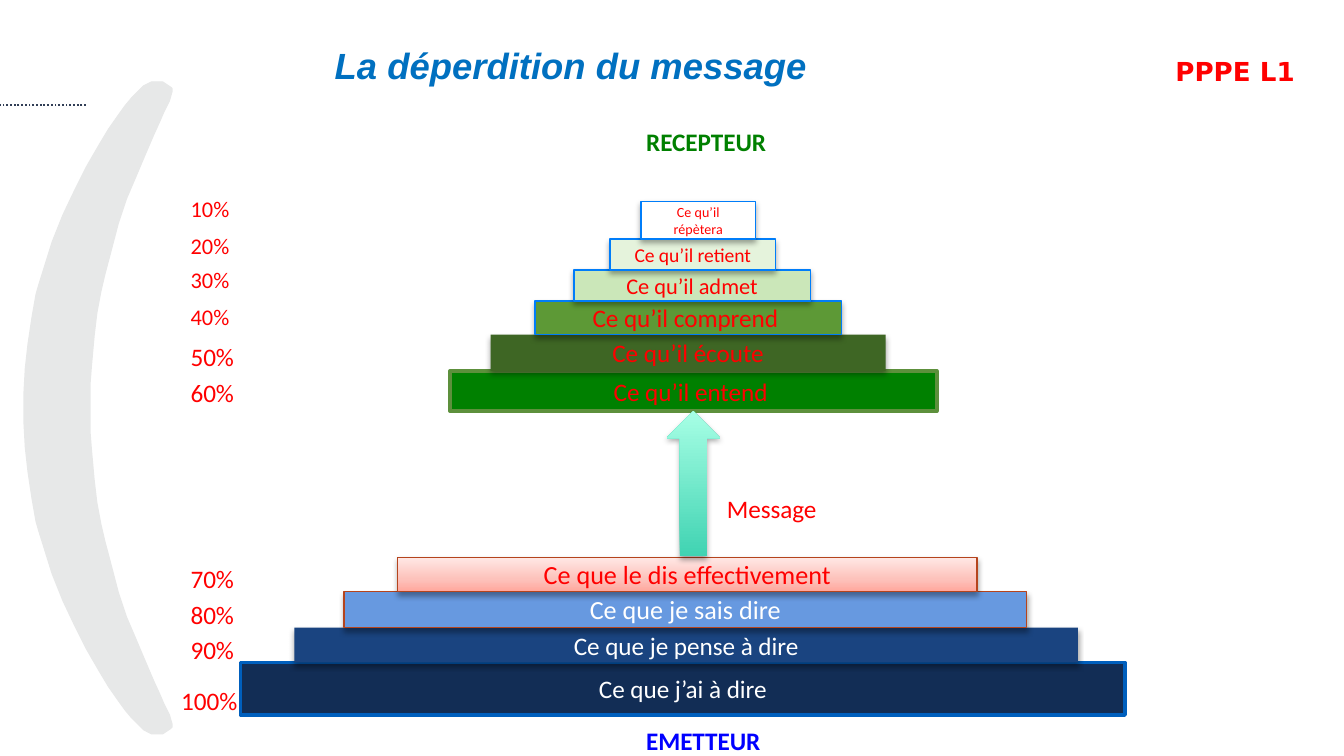
from collections import namedtuple

from lxml.etree import SubElement
from pptx import Presentation
from pptx.dml.color import RGBColor
from pptx.enum.dml import MSO_LINE
from pptx.enum.shapes import MSO_CONNECTOR, MSO_SHAPE
from pptx.enum.text import MSO_ANCHOR, MSO_AUTO_SIZE, PP_ALIGN
from pptx.oxml.ns import qn
from pptx.util import Pt

PX = 9144  # 100 px to the inch

WHITE = RGBColor(0xFF, 0xFF, 0xFF)
RED = RGBColor(0xFF, 0x00, 0x00)
GREEN = RGBColor(0x00, 0x80, 0x00)
BLUE = RGBColor(0x00, 0x00, 0xFF)
TITLE_BLUE = RGBColor(0x00, 0x70, 0xC0)
CRESCENT_GREY = RGBColor(0xE7, 0xE8, 0xE8)
DOTTED_NAVY = RGBColor(0x31, 0x3E, 0x56)
NAVY = RGBColor(0x12, 0x2D, 0x55)
DARK_BLUE = RGBColor(0x1A, 0x44, 0x80)
LIGHT_BLUE = RGBColor(0x67, 0x99, 0xE0)
NAVY_EDGE = RGBColor(0x00, 0x5F, 0xBD)
RUST_EDGE = RGBColor(0xB5, 0x44, 0x1D)
GREEN_EDGE = RGBColor(0x5D, 0x90, 0x3C)
SKY_EDGE = RGBColor(0x00, 0x7D, 0xF9)
FOREST = RGBColor(0x3E, 0x66, 0x24)
LEAF = RGBColor(0x5D, 0x99, 0x36)
PALE_GREEN = RGBColor(0xCB, 0xE7, 0xB9)
FAINT_GREEN = RGBColor(0xE5, 0xF3, 0xDC)
# Gradients run from bottom to top: (position in percent, colour)
PINK_GRADIENT = [(0, "FFA79D"), (35, "FDC2BB"), (100, "FFE7E4")]
MINT_GRADIENT = [(0, "40D3B2"), (100, "A7FFE5")]

Step = namedtuple(
    "Step", "text left width height size color fill edge edge_width percent label_shift")

# Both pyramids are listed from the bottom step up
SENDER_STEPS = [
    Step("Ce que j’ai à dire", 54, 658, 39, 13.5, WHITE, NAVY, NAVY_EDGE, 2, 100, 12),
    Step("Ce que je pense à dire", 94, 583, 26, 13.5, WHITE, DARK_BLUE, None, 0, 90, 0),
    Step("Ce que je sais dire", 131, 508, 27, 14, WHITE, LIGHT_BLUE, RUST_EDGE, 0.75, 80, 1),
    Step("Ce que le dis effectivement", 171, 431, 25, 14, RED, PINK_GRADIENT, RUST_EDGE, 0.75,
         70, -1),
]
RECEIVER_STEPS = [
    Step("Ce qu’il entend ", 210, 362, 30, 13.5, RED, GREEN, GREEN_EDGE, 2, 60, 0),
    Step("Ce qu’il écoute", 240, 294, 27, 13.5, RED, FOREST, None, 0, 50, 0),
    Step("Ce qu’il comprend ", 273, 228, 25, 13.5, RED, LEAF, SKY_EDGE, 0.75, 40, -3),
    Step("Ce qu’il admet", 302, 176, 23, 12, RED, PALE_GREEN, SKY_EDGE, 0.75, 30, -8),
    Step("Ce qu’il retient", 329, 123, 23, 10.5, RED, FAINT_GREEN, SKY_EDGE, 0.75, 20, -10),
    Step("Ce qu’il répètera", 352, 85, 28, 7.5, RED, WHITE, SKY_EDGE, 0.75, 10, -10),
]

# Upper half of the crescent: outer edge from the middle to the tip, then back inside
CRESCENT_HALF = [
    (0, 243), (0, 231), (1, 213), (3, 195), (6, 175), (9, 158), (11, 151), (16, 135),
    (21, 119), (29, 99), (38, 80), (46, 64), (50, 57), (57, 45), (63, 35), (70, 25),
    (75, 18), (80, 12), (85, 7), (89, 3), (95, 0), (97, 0), (103, 0), (109, 4), (110, 5),
    (110, 7), (108, 14), (104, 22), (101, 29), (96, 40), (90, 54), (82, 73), (76, 87),
    (70, 105), (64, 128), (60, 143), (57, 156), (54, 172), (52, 189), (50, 211), (49, 224),
    (49, 243),
]


def set_font(paragraph, size, color, name="Calibri", bold=False, italic=False):
    for run in paragraph.runs:
        run.font.size = Pt(size)
        run.font.name = name
        run.font.color.rgb = color
        run.font.bold = bold
        run.font.italic = italic


def set_fill(shape, fill):
    """Fill with one colour, or with a list of gradient stops."""
    if isinstance(fill, RGBColor):
        shape.fill.solid()
        shape.fill.fore_color.rgb = fill
        return
    shape.fill.gradient()
    shape.fill.gradient_angle = 90
    stop_list = shape.element.spPr.find(f".//{qn('a:gsLst')}")
    for stop in list(stop_list):
        stop_list.remove(stop)
    for position, color in fill:
        stop = SubElement(stop_list, qn("a:gs"), pos=str(position * 1000))
        SubElement(stop, qn("a:srgbClr"), val=color)


def add_soft_shadow(shape):
    effects = shape.element.spPr.find(qn("a:effectLst"))
    shadow = SubElement(effects, qn("a:outerShdw"), blurRad=str(Pt(3.1)), dist=str(Pt(1.8)),
                        dir="5400000", rotWithShape="0")
    color = SubElement(shadow, qn("a:srgbClr"), val="000000")
    SubElement(color, qn("a:alpha"), val="35000")


def add_block(slide, kind, left, top, width, height, fill, edge=None, edge_width=0):
    shape = slide.shapes.add_shape(kind, left * PX, top * PX, width * PX, height * PX)
    shape.shadow.inherit = False
    set_fill(shape, fill)
    if edge is None:
        shape.line.fill.background()
    else:
        shape.line.color.rgb = edge
        shape.line.width = Pt(edge_width)
    return shape


def add_label(slide, left, top, width, height, text, color, size=13.5, bold=False):
    box = slide.shapes.add_textbox(left * PX, top * PX, width * PX, height * PX)
    box.text_frame.word_wrap = False
    box.text_frame.auto_size = MSO_AUTO_SIZE.SHAPE_TO_FIT_TEXT
    box.text_frame.text = text
    set_font(box.text_frame.paragraphs[0], size, color, bold=bold)


def add_percentage(slide, left, top, percent):
    if percent == 100:
        left, width, height, size = left, 63, 33, 13.5
    elif percent > 40:
        left, width, height, size = left + 7, 53, 33, 13.5
    else:
        left, width, height, size = left + 7, 49, 30, 12
    add_label(slide, left, top, width, height, f"{percent}%", RED, size)


def add_pyramid(slide, left, bottom, steps):
    """Stack the steps upwards from bottom, each with its percentage at the left."""
    top = bottom
    for step in steps:
        top -= step.height
        block = add_block(slide, MSO_SHAPE.RECTANGLE, left + step.left, top, step.width,
                          step.height, step.fill, step.edge, step.edge_width)
        if step.edge_width < 2:
            add_soft_shadow(block)
        frame = block.text_frame
        frame.word_wrap = True
        frame.vertical_anchor = MSO_ANCHOR.MIDDLE
        frame.text = step.text
        frame.paragraphs[0].alignment = PP_ALIGN.CENTER
        set_font(frame.paragraphs[0], step.size, step.color)
        add_percentage(slide, left, top + step.label_shift, step.percent)


def add_decoration(slide, left, top, height):
    """Draw the crescent, mirrored about its middle, and the dotted line."""
    mirrored = [(x, height - y) for x, y in reversed(CRESCENT_HALF)]
    points = [(left + x, top + y) for x, y in CRESCENT_HALF + mirrored]
    builder = slide.shapes.build_freeform(*points[0], scale=PX)
    builder.add_line_segments(points[1:], close=True)
    crescent = builder.convert_to_shape()
    crescent.shadow.inherit = False
    set_fill(crescent, CRESCENT_GREY)
    crescent.line.color.rgb = CRESCENT_GREY
    crescent.line.width = Pt(0.75)

    line_y = (top + 17) * PX
    line = slide.shapes.add_connector(MSO_CONNECTOR.STRAIGHT, (left + 46) * PX, line_y, 0, line_y)
    line.line.color.rgb = DOTTED_NAVY
    line.line.width = Pt(1)
    line.line.dash_style = MSO_LINE.ROUND_DOT
    SubElement(line.element.spPr, qn("a:effectLst"))


def add_heading(shape, text, alignment, size, color, top_inset=0, **style):
    frame = shape.text_frame
    frame.word_wrap = True
    frame.vertical_anchor = MSO_ANCHOR.MIDDLE
    frame.margin_left = frame.margin_right = frame.margin_bottom = 0
    frame.margin_top = top_inset * PX
    frame.text = text
    frame.paragraphs[0].alignment = alignment
    set_font(frame.paragraphs[0], size, color, **style)


def add_header(slide, left, top):
    title = slide.shapes.add_textbox((left + 249) * PX, (top + 32) * PX, 565 * PX, 33 * PX)
    add_heading(title, "La déperdition du message", PP_ALIGN.LEFT, 19.5, TITLE_BLUE,
                name="Arial", bold=True, italic=True)
    course = add_block(slide, MSO_SHAPE.RECTANGLE, left + 838, top, 162, 98, WHITE)
    add_heading(course, "PPPE L1", PP_ALIGN.CENTER, 14, RED, top_inset=7,
                name="DejaVu Sans", bold=True)


def add_message_arrow(slide, left, top, height):
    arrow = add_block(slide, MSO_SHAPE.UP_ARROW, left, top, 40, height, MINT_GRADIENT)
    add_soft_shadow(arrow)
    add_label(slide, left + 35, top + 56, 88, 33, "Message", RED)


def main():
    presentation = Presentation()
    presentation.slide_width = 1000 * PX
    presentation.slide_height = 1125 * PX // 2
    slide = presentation.slides.add_slide(presentation.slide_layouts[6])
    add_decoration(slide, 18, 61, 485)
    add_header(slide, 0, 0)
    add_pyramid(slide, 125, 532, SENDER_STEPS)
    add_pyramid(slide, 125, 306, RECEIVER_STEPS)
    add_message_arrow(slide, 496, 306, 108)
    add_label(slide, 471, 535, 106, 33, "EMETTEUR", BLUE, bold=True)
    add_label(slide, 471, 89, 111, 33, "RECEPTEUR", GREEN, bold=True)
    presentation.save("out.pptx")


if __name__ == "__main__":
    main()
